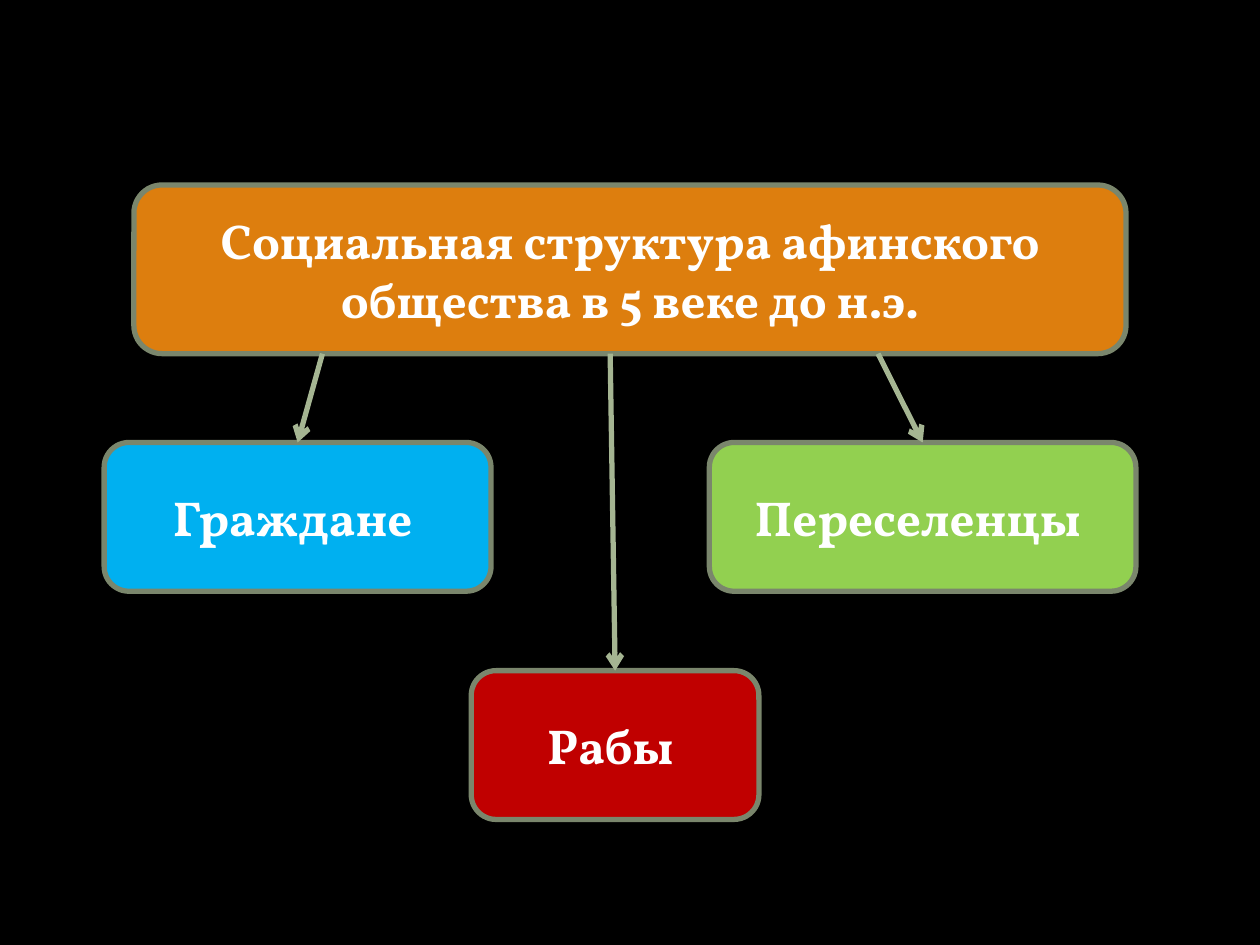
import pptx
import pptx.dml.color
import pptx.enum.shapes
import pptx.enum.text
import pptx.oxml
import pptx.oxml.ns
import pptx.util

Cm = pptx.util.Cm
RGBColor = pptx.dml.color.RGBColor

BLACK = RGBColor(0x00, 0x00, 0x00)
WHITE = RGBColor(0xFF, 0xFF, 0xFF)
ORANGE = RGBColor(0xDD, 0x7E, 0x0E)
BLUE = RGBColor(0x00, 0xB0, 0xF0)
RED = RGBColor(0xC0, 0x00, 0x00)
GREEN = RGBColor(0x92, 0xD0, 0x50)
BORDER = RGBColor(0x7A, 0x86, 0x6C)
ARROW = RGBColor(0xA5, 0xB5, 0x92)


class Diagram:
    font = "Vollkorn"
    text_size = pptx.util.Pt(28)
    line_width = pptx.util.Pt(3)

    def __init__(self, slide):
        self.slide = slide
        slide.background.fill.solid()
        slide.background.fill.fore_color.rgb = BLACK

    def box(self, text, left, top, width, height, color):
        box = self.slide.shapes.add_shape(
            pptx.enum.shapes.MSO_SHAPE.ROUNDED_RECTANGLE,
            Cm(left), Cm(top), Cm(width), Cm(height))
        box.shadow.inherit = False
        box.fill.solid()
        box.fill.fore_color.rgb = color
        box.line.color.rgb = BORDER
        box.line.width = self.line_width
        frame = box.text_frame
        frame.word_wrap = True
        frame.vertical_anchor = pptx.enum.text.MSO_ANCHOR.MIDDLE
        frame.text = text
        paragraph = frame.paragraphs[0]
        paragraph.alignment = pptx.enum.text.PP_ALIGN.CENTER
        font = paragraph.runs[0].font
        font.name = self.font
        font.size = self.text_size
        font.bold = True
        font.color.rgb = WHITE
        return box

    def arrow(self, start_x, source, target):
        start_y = source.top + source.height
        arrow = self.slide.shapes.add_connector(
            pptx.enum.shapes.MSO_CONNECTOR.STRAIGHT,
            Cm(start_x), start_y, target.left + target.width // 2, target.top)
        arrow.end_connect(target, 0)
        arrow.line.color.rgb = ARROW
        arrow.line.width = self.line_width
        namespace = pptx.oxml.ns.nsdecls("a")
        arrow.line._get_or_add_ln().append(
            pptx.oxml.parse_xml(f'<a:tailEnd {namespace} type="arrow"/>'))
        arrow._element.spPr.append(
            pptx.oxml.parse_xml(f"<a:effectLst {namespace}/>"))


def main():
    presentation = pptx.Presentation()
    presentation.slide_width = Cm(25.4)
    presentation.slide_height = Cm(19.05)
    diagram = Diagram(presentation.slides.add_slide(presentation.slide_layouts[6]))

    society = diagram.box("Социальная структура афинского общества в 5 веке до н.э.",
                          2.7, 3.73, 20, 3.4, ORANGE)
    citizens = diagram.box("Граждане ", 2.1, 8.92, 7.8, 3, BLUE)
    slaves = diagram.box("Рабы ", 9.5, 13.52, 5.8, 3, RED)
    settlers = diagram.box("Переселенцы ", 14.3, 8.92, 8.6, 3, GREEN)

    for start_x, group in ((6.5, citizens), (17.7, settlers), (12.3, slaves)):
        diagram.arrow(start_x, society, group)

    presentation.save("out.pptx")


if __name__ == "__main__":
    main()
